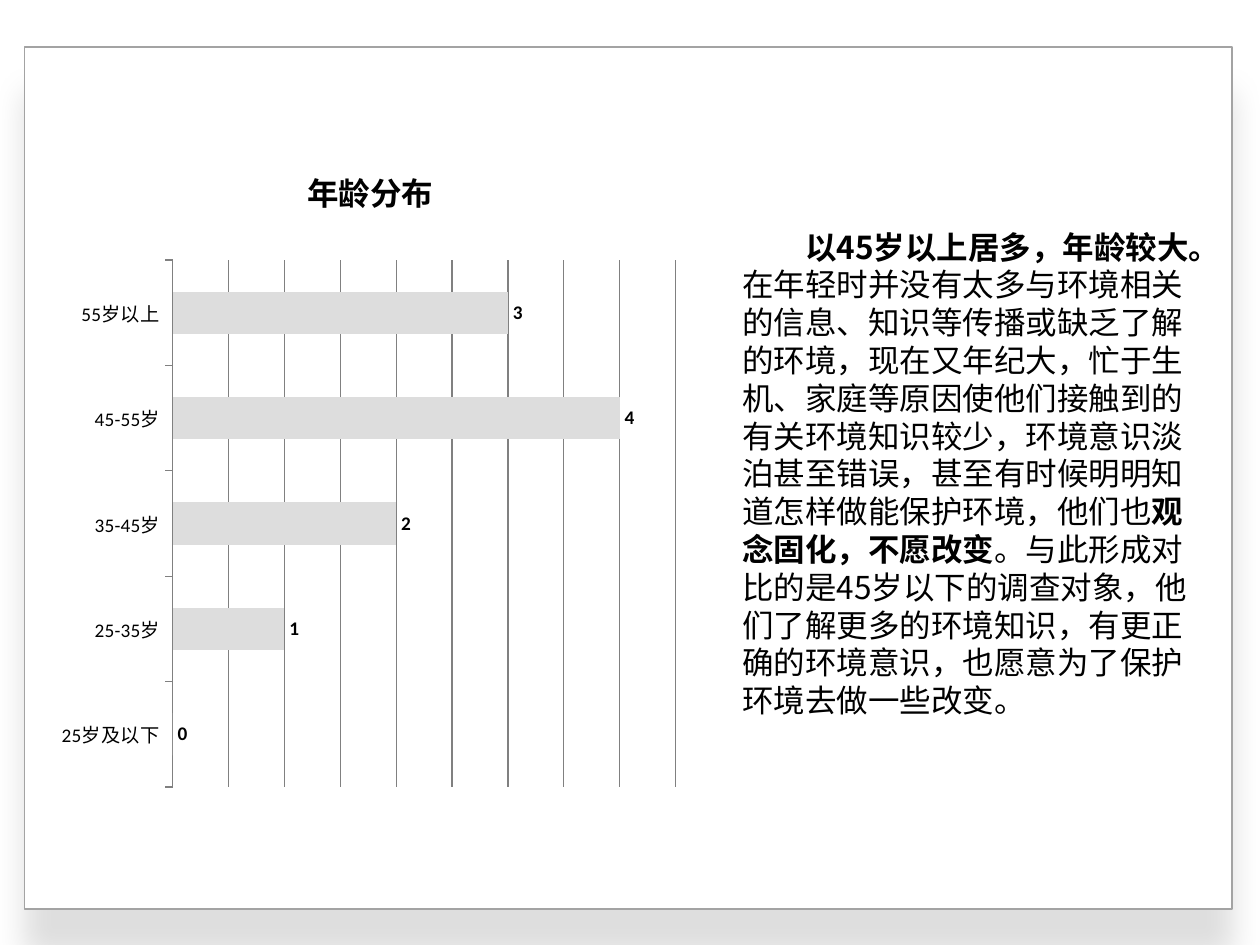
import lxml.etree
import pptx
import pptx.chart.data
import pptx.dml.color
import pptx.enum.chart
import pptx.enum.shapes
import pptx.enum.text
import pptx.oxml
import pptx.oxml.ns
import pptx.util

Pt = pptx.util.Pt
qn = pptx.oxml.ns.qn

BODY_FONT = "Noto Sans CJK SC"
CHART_FONT = "Calibri"
BLACK = "000000"
GRID_GRAY = "808080"

AGES = ("25岁及以下", "25-35岁", "35-45岁", "45-55岁", "55岁以上")
COUNTS = (0, 1, 2, 4, 3)
COMMENTARY = (
    ("以45岁以上居多，年龄较大。", True),
    ("在年轻时并没有太多与环境相关的信息、知识等传播或缺乏了解的环境，"
     "现在又年纪大，忙于生机、家庭等原因使他们接触到的有关环境知识较少，"
     "环境意识淡泊甚至错误，甚至有时候明明知道怎样做能保护环境，他们也", False),
    ("观念固化，不愿改变", True),
    ("。与此形成对比的是45岁以下的调查对象，他们了解更多的环境知识，"
     "有更正确的环境意识，也愿意为了保护环境去做一些改变。", False),
)


def color(hex_string):
    return pptx.dml.color.RGBColor.from_string(hex_string)


def set_attributes(target, values):
    for name, value in values.items():
        setattr(target, name, value)


def format_font(font, name, size, bold=False):
    set_attributes(font, {"name": name, "size": Pt(size), "bold": bold})
    font.color.rgb = color(BLACK)


def format_line(line, hex_string, width):
    line.color.rgb = color(hex_string)
    line.width = Pt(width)


def add_shadow(shape, blur, distance, opacity):
    shape.shadow.inherit = False
    effects = shape._element.spPr.find(qn("a:effectLst"))
    shadow = lxml.etree.SubElement(
        effects, qn("a:outerShdw"), blurRad=str(Pt(blur)), dist=str(Pt(distance)),
        dir=str(90 * 60000), algn="t", rotWithShape="0")
    shade = lxml.etree.SubElement(shadow, qn("a:srgbClr"), val=BLACK)
    lxml.etree.SubElement(shade, qn("a:alpha"), val=str(opacity * 1000))


def add_panel(slide, left, top, width, height):
    panel = slide.shapes.add_shape(
        pptx.enum.shapes.MSO_SHAPE.RECTANGLE, Pt(left), Pt(top), Pt(width), Pt(height))
    panel.fill.solid()
    panel.fill.fore_color.rgb = color("FFFFFF")
    format_line(panel.line, "A3A3A3", 1)
    add_shadow(panel, blur=18, distance=26, opacity=12)


def manual_layout(values):
    layout = pptx.oxml.parse_xml(
        '<c:layout xmlns:c="http://schemas.openxmlformats.org/drawingml/2006/chart">'
        "<c:manualLayout/></c:layout>")
    for name, value in values.items():
        lxml.etree.SubElement(layout[0], qn("c:" + name), val=str(value))
    return layout


def place_title(chart):
    title = chart.chart_title._element
    for old_layout in title.findall(qn("c:layout")):
        title.remove(old_layout)
    title.find(qn("c:tx")).addnext(
        manual_layout({"xMode": "edge", "yMode": "edge", "x": 0.4, "y": 0.05}))


def place_plot(chart):
    plot_area = chart._chartSpace.chart.plotArea
    for old_layout in plot_area.findall(qn("c:layout")):
        plot_area.remove(old_layout)
    plot_area.insert(0, manual_layout({
        "layoutTarget": "inner", "xMode": "edge", "yMode": "edge",
        "x": 0.2, "y": 0.2, "w": 0.78, "h": 0.78}))


def format_axes(chart):
    tick = pptx.enum.chart.XL_TICK_MARK
    category_axis = chart.category_axis
    set_attributes(category_axis, {
        "major_tick_mark": tick.OUTSIDE, "minor_tick_mark": tick.NONE,
        "has_major_gridlines": False})
    format_font(category_axis.tick_labels.font, CHART_FONT, 11)
    format_line(category_axis.format.line, GRID_GRAY, 0.75)
    value_axis = chart.value_axis
    set_attributes(value_axis, {
        "minimum_scale": 0, "maximum_scale": 4.5, "major_unit": 0.5,
        "has_major_gridlines": True, "visible": False})
    format_line(value_axis.major_gridlines.format.line, GRID_GRAY, 0.75)


def add_age_chart(slide, left, top, width, height):
    data = pptx.chart.data.CategoryChartData()
    data.categories = AGES
    data.add_series("Series 1", COUNTS)
    chart = slide.shapes.add_chart(
        pptx.enum.chart.XL_CHART_TYPE.BAR_CLUSTERED,
        Pt(left), Pt(top), Pt(width), Pt(height), data).chart
    format_font(chart.font, CHART_FONT, 10)
    chart.has_legend = False
    chart.chart_title.text_frame.text = "年龄分布"
    format_font(chart.chart_title.text_frame.paragraphs[0].runs[0].font, CHART_FONT, 18, True)
    place_title(chart)
    place_plot(chart)
    format_axes(chart)

    plot = chart.plots[0]
    set_attributes(plot, {"gap_width": 150, "vary_by_categories": False,
                          "has_data_labels": True})
    set_attributes(plot.data_labels, {
        "show_value": True,
        "position": pptx.enum.chart.XL_LABEL_POSITION.OUTSIDE_END})
    format_font(plot.data_labels.font, CHART_FONT, 11, True)
    fill = plot.series[0].format.fill
    fill.solid()
    fill.fore_color.rgb = color("DDDDDD")


def add_commentary(slide, left, top, width, height):
    frame = slide.shapes.add_textbox(Pt(left), Pt(top), Pt(width), Pt(height)).text_frame
    set_attributes(frame, {
        "word_wrap": True,
        "auto_size": pptx.enum.text.MSO_AUTO_SIZE.SHAPE_TO_FIT_TEXT})
    paragraph = frame.paragraphs[0]
    paragraph.line_spacing = Pt(21.6)
    paragraph._p.get_or_add_pPr().set("indent", str(Pt(36)))
    for text, bold in COMMENTARY:
        run = paragraph.add_run()
        run.text = text
        format_font(run.font, BODY_FONT, 18, bold)
        lxml.etree.SubElement(run._r.get_or_add_rPr(), qn("a:ea"), typeface=BODY_FONT)


def main():
    presentation = pptx.Presentation()
    set_attributes(presentation, {"slide_width": Pt(720), "slide_height": Pt(540)})
    slide = presentation.slides.add_slide(presentation.slide_layouts[6])
    add_panel(slide, 14, 27, 690, 492.5)
    add_age_chart(slide, 25, 71.5, 368.5, 386)
    add_commentary(slide, 417, 126.5, 272, 301)
    presentation.save("out.pptx")


if __name__ == "__main__":
    main()
